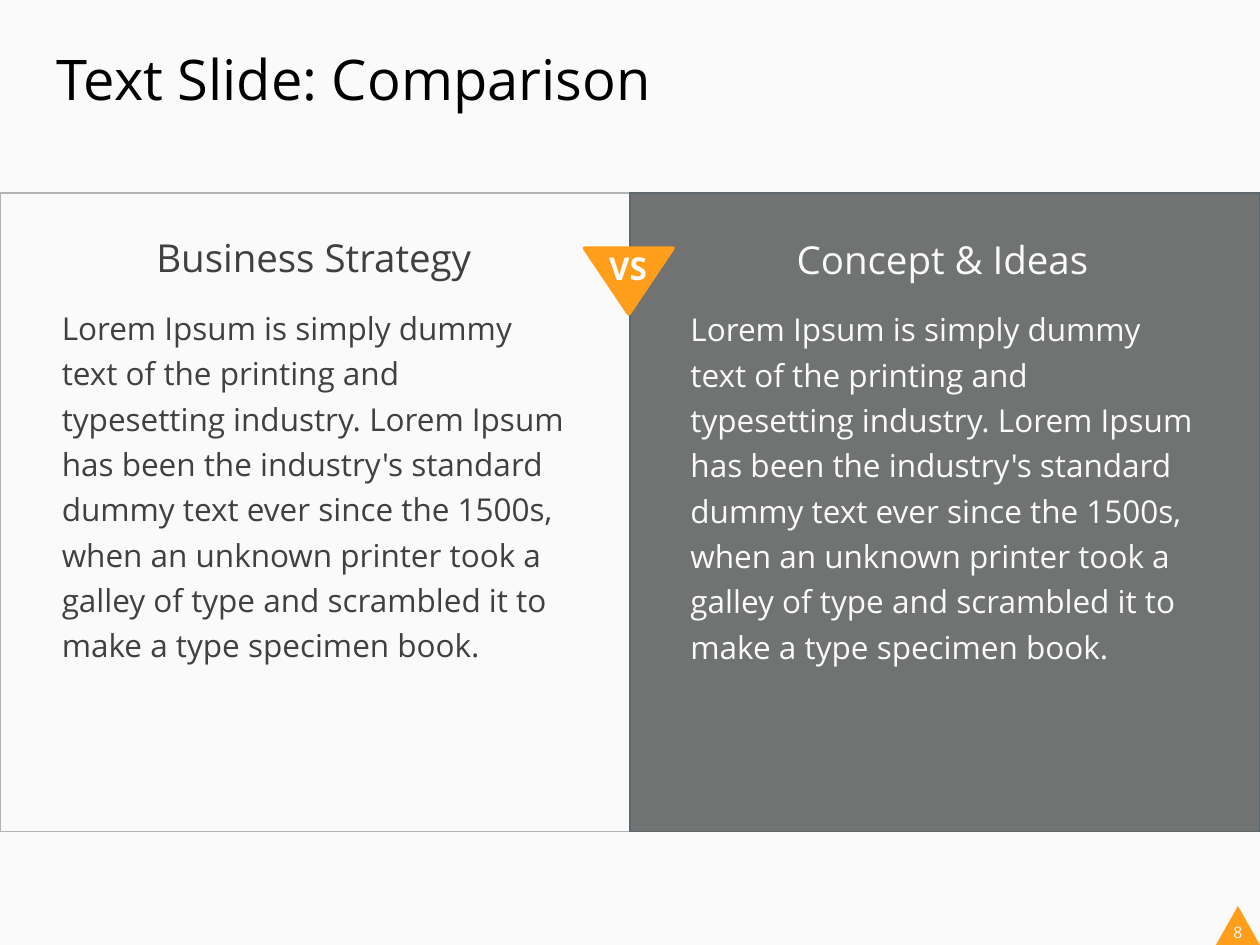
from lxml.etree import SubElement
from pptx import Presentation
from pptx.dml.color import RGBColor
from pptx.enum.shapes import MSO_SHAPE as Shape
from pptx.enum.text import MSO_ANCHOR as Anchor, MSO_AUTO_SIZE as AutoSize, PP_ALIGN as Align
from pptx.oxml.ns import qn
from pptx.util import Inches, Pt

PAPER = RGBColor(0xFA, 0xFA, 0xFA)
BLACK = RGBColor(0, 0, 0)
INK = RGBColor(0x40, 0x40, 0x40)
GRAY = RGBColor(0x70, 0x73, 0x72)
LIGHT_EDGE = RGBColor(0xB2, 0xB4, 0xB2)
DARK_EDGE = RGBColor(0x5D, 0x68, 0x6E)
ORANGE = RGBColor(0xFF, 0x9E, 0x1B)

BODY = (
    "Lorem Ipsum is simply dummy text of the printing and typesetting industry. "
    "Lorem Ipsum has been the industry's standard dummy text ever since the 1500s, "
    "when an unknown printer took a galley of type and scrambled it to make a type "
    "specimen book."
)


class Slide:
    font = "Open Sans"

    def __init__(self, page):
        self.page = page
        page.background.fill.solid()
        page.background.fill.fore_color.rgb = PAPER

    def place(self, box, left, top, width, height):
        box.left, box.top = Inches(left), Inches(top)
        box.width, box.height = Inches(width), Inches(height)

    def frame(self, box, margins, wrap=True, anchor=Anchor.TOP):
        """Set the text margins (horizontal, vertical), wrapping and anchor of a box."""
        text = box.text_frame
        text.auto_size = AutoSize.NONE
        text.word_wrap = wrap
        text.vertical_anchor = anchor
        text.margin_left = text.margin_right = Inches(margins[0])
        text.margin_top = text.margin_bottom = Inches(margins[1])
        return text

    def style(self, para, size, color, align=Align.LEFT, bold=False, after=0, spacing=1.0):
        para.alignment = align
        para.space_before, para.space_after = Pt(0), Pt(after)
        para.line_spacing = spacing
        for span in para.runs:
            span.font.name, span.font.size = self.font, Pt(size)
            span.font.bold, span.font.color.rgb = bold, color

    def title(self, text, *area):
        box = self.page.shapes.title
        self.place(box, *area)
        self.frame(box, (0.1, 0.05)).text = text
        self.style(box.text_frame.paragraphs[0], 32, BLACK)

    def shape(self, kind, area, fill=None, edge=None, weight=1, rotation=0):
        shape = self.page.shapes.add_shape(kind, *map(Inches, area))
        shape.shadow.inherit = False
        shape.rotation = rotation
        if fill is None:
            shape.fill.background()
        else:
            shape.fill.solid()
            shape.fill.fore_color.rgb = fill
        if edge is None:
            shape.line.fill.background()
        else:
            shape.line.color.rgb, shape.line.width = edge, Pt(weight)
        return shape

    def panel(self, area, fill, edge):
        """Draw a rectangle behind the placeholders."""
        shape = self.shape(Shape.RECTANGLE, area, fill, edge)
        self.page.shapes._spTree.insert(2, shape._element)

    def column(self, index, area, heading, body, color):
        box = self.page.placeholders[index]
        self.place(box, *area)
        text = self.frame(box, (0, 0))
        text.text = f"{heading}\n{body}"
        for para in text.paragraphs:
            properties = para._p.get_or_add_pPr()
            properties.set("marL", "0")
            properties.set("indent", "0")
            SubElement(properties, qn("a:buNone"))
        self.style(text.paragraphs[0], 22, color, Align.CENTER, after=12)
        self.style(text.paragraphs[1], 18, color, spacing=1.2)

    def triangle(self, area, rotation=0, edge=None):
        shape = self.shape(Shape.ISOSCELES_TRIANGLE, area, ORANGE, edge, 2.25, rotation)
        if edge is not None:
            SubElement(shape.line._get_or_add_ln(), qn("a:round"))

    def label(self, text, area, size, bold=False):
        box = self.page.shapes.add_textbox(*map(Inches, area))
        self.frame(box, (0, 0), wrap=False, anchor=Anchor.MIDDLE).text = text
        self.style(box.text_frame.paragraphs[0], size, PAPER, Align.CENTER, bold)


def main():
    deck = Presentation()
    deck.slide_width, deck.slide_height = Inches(10), Inches(7.5)
    slide = Slide(deck.slides.add_slide(deck.slide_layouts[3]))

    slide.title("Text Slide: Comparison", 0.35, 0.3, 9.24, 1.25)
    slide.panel((5, 1.53, 5, 5.07), GRAY, DARK_EDGE)
    slide.panel((0, 1.53, 5, 5.07), None, LIGHT_EDGE)
    slide.column(1, (0.49, 1.86, 4, 4.66), "Business Strategy", BODY, INK)
    slide.column(2, (5.48, 1.87, 4, 4.65), "Concept & Ideas", BODY, PAPER)

    slide.triangle((4.64, 1.97, 0.7, 0.52), rotation=180, edge=ORANGE)
    slide.label("VS", (4.73, 1.93, 0.51, 0.4), 18, bold=True)
    slide.triangle((9.65, 7.19, 0.35, 0.31))
    slide.label("8", (9.74, 7.32, 0.17, 0.15), 9)

    deck.save("out.pptx")


if __name__ == "__main__":
    main()
